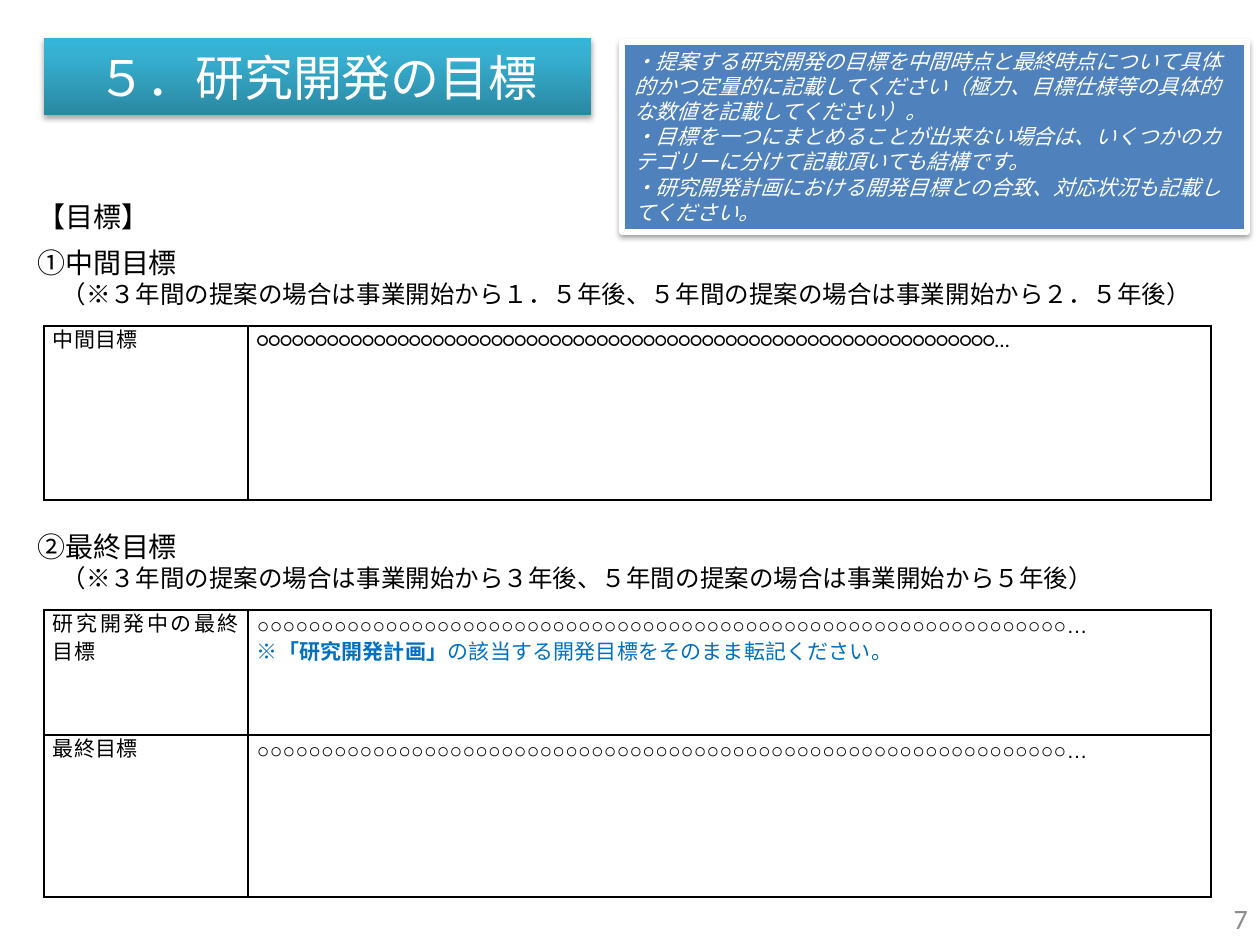
from lxml.etree import SubElement
from pptx import Presentation
from pptx.dml.color import RGBColor
from pptx.enum.shapes import MSO_SHAPE
from pptx.enum.text import MSO_ANCHOR as ANCHOR, PP_ALIGN as ALIGN
from pptx.oxml import parse_xml
from pptx.oxml.ns import nsdecls, qn
from pptx.util import Pt

EMU_PER_PX = 914400 / 126
BLACK, WHITE, BLUE = "000000", "FFFFFF", "0070C0"
TABLE_LEFT, TABLE_COLUMNS = 44, (204, 963)
CIRCLES = "○" * 63 + "…"


def px(length):
    return round(length * EMU_PER_PX)


def rgb(color):
    return RGBColor.from_string(color)


def write(frame, paragraphs, align=ALIGN.LEFT, anchor=ANCHOR.TOP, spacing=None, **style):
    """Each paragraph is a text, or a list of (text, run format) pairs."""
    frame.word_wrap = True
    frame.vertical_anchor = anchor
    for index, content in enumerate(paragraphs):
        paragraph = frame.paragraphs[0] if index == 0 else frame.add_paragraph()
        paragraph.alignment = align
        if spacing:
            paragraph.line_spacing = Pt(spacing)
        runs = [(content, {})] if isinstance(content, str) else content
        for text, changes in runs:
            add_run(paragraph, text, **{**style, **changes})


def add_run(paragraph, text, size=12, font="Arial", color=BLACK, bold=False,
            italic=False, tracking=None):
    run = paragraph.add_run()
    run.text = text
    run.font.size = Pt(size)
    run.font.name = font
    run.font.bold = bold
    run.font.italic = italic
    run.font.color.rgb = rgb(color)
    if tracking:
        run.font._element.set("spc", str(round(tracking * 100)))


def add_text(slide, box, paragraphs, **style):
    frame = slide.shapes.add_textbox(*map(px, box)).text_frame
    write(frame, paragraphs, **style)


def add_panel(slide, box, shadow_distance, shadow_opacity):
    """Add a rectangle with a soft shadow below it."""
    panel = slide.shapes.add_shape(MSO_SHAPE.RECTANGLE, *map(px, box))
    panel.shadow.inherit = False
    effects = panel._element.spPr.find(qn("a:effectLst"))
    shadow = SubElement(effects, qn("a:outerShdw"), blurRad=str(Pt(3.1)),
                        dist=str(Pt(shadow_distance)), dir="5400000", rotWithShape="0")
    black = SubElement(shadow, qn("a:srgbClr"), val=BLACK)
    SubElement(black, qn("a:alpha"), val=str(shadow_opacity * 1000))
    return panel


def fill_gradient(shape, stops, angle):
    shape.fill.gradient()
    gradient = shape._element.spPr.find(qn("a:gradFill"))
    stop_list = gradient.find(qn("a:gsLst"))
    for stop in list(stop_list):
        stop_list.remove(stop)
    for position, color in stops:
        stop = SubElement(stop_list, qn("a:gs"), pos=str(position * 1000))
        SubElement(stop, qn("a:srgbClr"), val=color)
    gradient.find(qn("a:lin")).set("ang", str(angle * 60000))


def add_borders(cell):
    properties = cell._tc.get_or_add_tcPr()
    for index, side in enumerate(("lnL", "lnR", "lnT", "lnB")):
        properties.insert(index, parse_xml(
            f'<a:{side} {nsdecls("a")} w="{Pt(1)}"><a:solidFill>'
            f'<a:srgbClr val="{BLACK}"/></a:solidFill></a:{side}>'))


def add_goal_table(slide, top, heights, rows, font):
    """Each row holds a label and the paragraphs of its goal."""
    table = slide.shapes.add_table(
        len(rows), len(TABLE_COLUMNS), px(TABLE_LEFT), px(top),
        px(sum(TABLE_COLUMNS)), px(sum(heights))).table
    table.first_row = table.horz_banding = False
    for column, width in zip(table.columns, TABLE_COLUMNS):
        column.width = px(width)
    for row, height, (label, goals) in zip(table.rows, heights, rows):
        row.height = px(height)
        for cell, paragraphs in zip(row.cells, ([label], goals)):
            cell.margin_left = cell.margin_right = px(9)
            cell.margin_top = cell.margin_bottom = 0
            cell.fill.background()
            add_borders(cell)
            write(cell.text_frame, paragraphs, align=ALIGN.JUSTIFY,
                  spacing=15.8, font=font, tracking=0.1)


def add_goal_heading(slide, top, title, period):
    add_text(slide, (25, top, 1201, 77), [title, [(period, {"size": 14})]], size=16)


def main():
    deck = Presentation()
    deck.slide_width, deck.slide_height = px(1260), px(945)
    slide = deck.slides.add_slide(deck.slide_layouts[6])

    title = add_panel(slide, (44, 38, 547, 77), shadow_distance=1.8, shadow_opacity=35)
    fill_gradient(title, [(0, "2A88A2"), (80, "37B1D2"), (100, "34B4D6")], angle=270)
    title.line.fill.background()
    write(title.text_frame, ["５．研究開発の目標"], align=ALIGN.CENTER,
          anchor=ANCHOR.MIDDLE, size=28, color=WHITE)

    guidance = add_panel(slide, (622, 42, 625, 190), shadow_distance=1.6, shadow_opacity=38)
    guidance.fill.solid()
    guidance.fill.fore_color.rgb = rgb("4F81BD")
    guidance.line.color.rgb = rgb(WHITE)
    guidance.line.width = Pt(3)
    write(guidance.text_frame, [
        "・提案する研究開発の目標を中間時点と最終時点について具体的かつ定量的に"
        "記載してください（極力、目標仕様等の具体的な数値を記載してください）。",
        "・目標を一つにまとめることが出来ない場合は、いくつかのカテゴリーに分けて"
        "記載頂いても結構です。",
        "・研究開発計画における開発目標との合致、対応状況も記載してください。",
    ], color=WHITE, italic=True)

    add_text(slide, (25, 193, 367, 46), ["【目標】"], size=16)

    add_goal_heading(
        slide, 239, "①中間目標",
        "　（※３年間の提案の場合は事業開始から１．５年後、"
        "５年間の提案の場合は事業開始から２．５年後）")
    add_goal_table(slide, 326, [174], [("中間目標", [CIRCLES])], font="Calibri")

    add_goal_heading(
        slide, 523, "②最終目標",
        "　（※３年間の提案の場合は事業開始から３年後、"
        "５年間の提案の場合は事業開始から５年後）")
    transcription = [
        ("※", {"color": BLUE}),
        ("「研究開発計画」", {"color": BLUE, "bold": True}),
        ("の該当する開発目標をそのまま転記ください。", {"color": BLUE}),
    ]
    add_goal_table(slide, 610, [125, 162], [
        ("研究開発中の最終目標", [CIRCLES, transcription]),
        ("最終目標", [CIRCLES]),
    ], font="Arial")

    add_text(slide, (966, 893, 294, 50), ["7"], align=ALIGN.RIGHT,
             anchor=ANCHOR.MIDDLE, size=16, font="Calibri", color="8C8C8C")

    deck.save("out.pptx")


if __name__ == "__main__":
    main()
